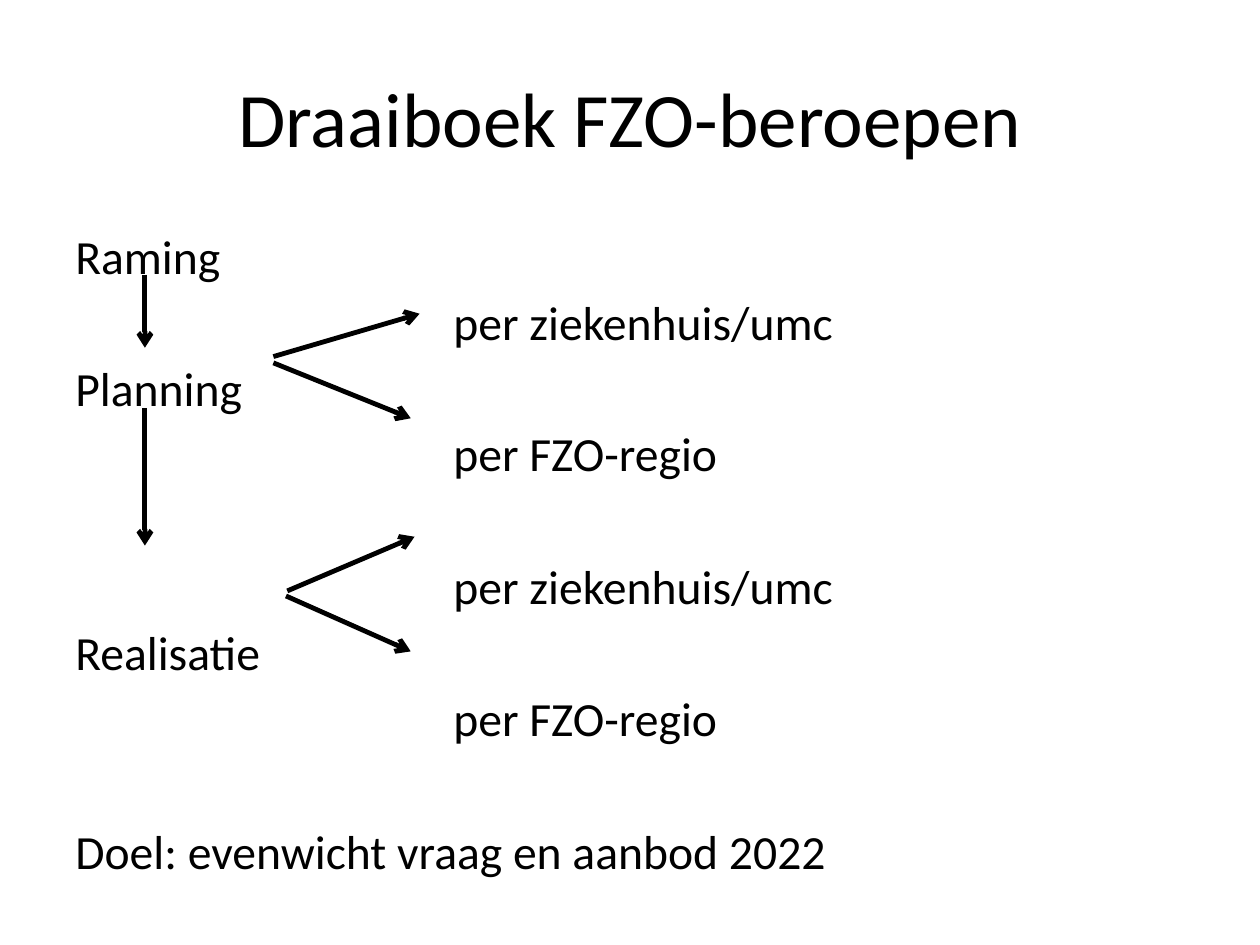
from collections import namedtuple
from dataclasses import dataclass

from lxml import etree
from pptx import Presentation
from pptx.dml.color import RGBColor
from pptx.enum.shapes import MSO_CONNECTOR
from pptx.enum.text import MSO_ANCHOR, PP_ALIGN
from pptx.oxml.ns import qn
from pptx.util import Inches, Pt

STRAIGHT = MSO_CONNECTOR.STRAIGHT
MIDDLE = MSO_ANCHOR.MIDDLE
TOP = MSO_ANCHOR.TOP
CENTER = PP_ALIGN.CENTER
LEFT = PP_ALIGN.LEFT

# The page is a grid of 100 columns by 75 rows of square cells.
COLUMNS, ROWS = 100, 75
CELL = Inches(0.1)

Box = namedtuple("Box", "left top width height")
Line = namedtuple("Line", "text level gap", defaults=(0, 0))


@dataclass(frozen=True)
class Theme:
    font: str = "Calibri"
    ink: RGBColor = RGBColor(0, 0, 0)
    title_size: float = 44
    body_size: float = 27.2
    space_before: float = 5
    line_pitch: float = 38.2
    arrow_width: float = 2.75
    indent: float = 30  # columns


THEME = Theme()

TITLE_BOX = Box(5, 3, 90, 12.5)
BODY_BOX = Box(5, 17.5, 90, 49.5)

# gap counts the empty lines left above a line.
STEPS = [
    Line("Raming"),
    Line("per ziekenhuis/umc", level=1),
    Line("Planning"),
    Line("per FZO-regio", level=1),
    Line("per ziekenhuis/umc", level=1, gap=1),
    Line("Realisatie"),
    Line("per FZO-regio", level=1),
    Line("Doel: evenwicht vraag en aanbod 2022", gap=1),
]

# Start and end of each arrow, in cells from the corner of the body box.
BRANCH_ARROWS = [
    ((16.7, 10.8), (28.3, 7.4)),
    ((16.7, 11.3), (27.6, 15.7)),
    ((17.8, 29.4), (27.9, 25.1)),
    ((17.7, 29.8), (27.6, 34.2)),
]
FLOW_COLUMN = 6.5
FLOW_ROWS = [(4.3, 10.1), (14.9, 25.8)]
FLOW_ARROWS = [((FLOW_COLUMN, start), (FLOW_COLUMN, end)) for start, end in FLOW_ROWS]


def cells(count):
    return round(count * CELL)


def add_text_frame(page, box, anchor):
    frame = page.shapes.add_textbox(*map(cells, box)).text_frame
    frame.word_wrap = True
    frame.vertical_anchor = anchor
    return frame


def style_paragraph(para, size, align):
    para.alignment = align
    para.font.name = THEME.font
    para.font.size = Pt(size)
    para.font.color.rgb = THEME.ink


def add_title(page, box):
    para = add_text_frame(page, box, MIDDLE).paragraphs[0]
    para.text = "Draaiboek FZO-beroepen"
    style_paragraph(para, THEME.title_size, CENTER)


def add_steps(page, box):
    frame = add_text_frame(page, box, TOP)
    for index, line in enumerate(STEPS):
        para = frame.add_paragraph() if index else frame.paragraphs[0]
        para.text = line.text
        if line.level:
            margin = cells(line.level * THEME.indent)
            para._p.get_or_add_pPr().set("marL", str(margin))
        if index:
            para.space_before = Pt(THEME.space_before + line.gap * THEME.line_pitch)
        style_paragraph(para, THEME.body_size, LEFT)


def add_arrow(page, box, start, end):
    points = [
        cells(origin + offset)
        for point in (start, end)
        for origin, offset in zip((box.left, box.top), point)
    ]
    arrow = page.shapes.add_connector(STRAIGHT, *points)
    arrow.line.width = Pt(THEME.arrow_width)
    arrow.line.color.rgb = THEME.ink
    etree.SubElement(arrow.line._get_or_add_ln(), qn("a:tailEnd"), type="arrow")
    etree.SubElement(arrow._element.spPr, qn("a:effectLst"))


def add_diagram(page, box):
    add_steps(page, box)
    for start, end in BRANCH_ARROWS + FLOW_ARROWS:
        add_arrow(page, box, start, end)


def main():
    deck = Presentation()
    deck.slide_width = cells(COLUMNS)
    deck.slide_height = cells(ROWS)
    page = deck.slides.add_slide(deck.slide_layouts[6])
    add_title(page, TITLE_BOX)
    add_diagram(page, BODY_BOX)
    deck.save("out.pptx")


if __name__ == "__main__":
    main()
